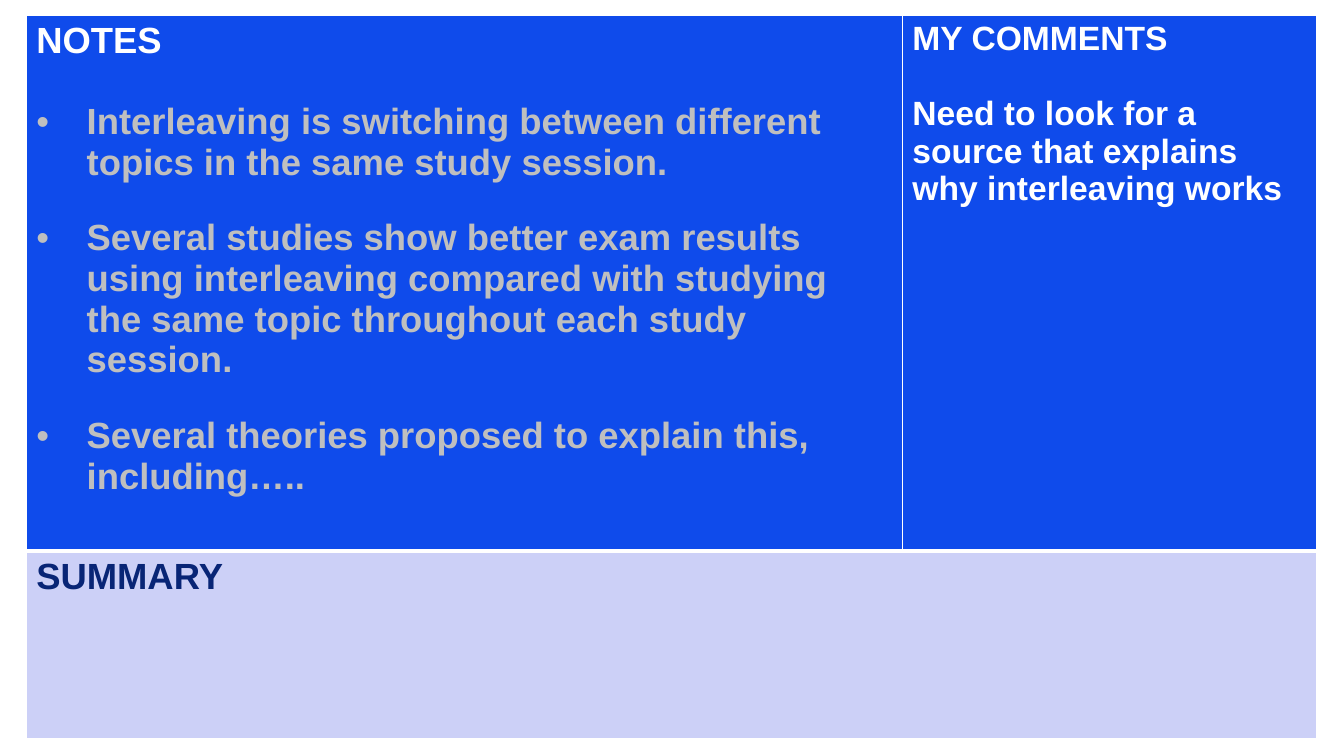
from dataclasses import dataclass

import lxml.etree
import pptx
import pptx.dml.color
import pptx.oxml.ns
import pptx.table
import pptx.text.text
import pptx.util

Inches = pptx.util.Inches
Pt = pptx.util.Pt
RGBColor = pptx.dml.color.RGBColor
qn = pptx.oxml.ns.qn

WHITE = RGBColor(0xFF, 0xFF, 0xFF)
GREY = RGBColor(0xBF, 0xBF, 0xBF)
BLUE = RGBColor(0x0F, 0x4B, 0xEB)
PALE = RGBColor(0xCC, 0xD0, 0xF7)
NAVY = RGBColor(0x08, 0x25, 0x76)


@dataclass
class Line:
    text: str
    size: int
    color: RGBColor
    before: int = 0
    bullet: bool = False


@dataclass
class Panel:
    row: int
    col: int
    fill: RGBColor
    lines: list[Line]


PANELS = [
    Panel(0, 0, BLUE, [
        Line("NOTES", 26, WHITE),
        Line("Interleaving is switching between different topics in the "
             "same study session.", 26, GREY, 29, True),
        Line("Several studies show better exam results using interleaving "
             "compared with studying the same topic throughout each study "
             "session.", 26, GREY, 25, True),
        Line("Several theories proposed to explain this, including…..",
             26, GREY, 25, True),
    ]),
    Panel(0, 1, BLUE, [
        Line("MY COMMENTS", 24, WHITE),
        Line("Need to look for a source that explains why interleaving "
             "works", 24, WHITE, 27),
    ]),
    Panel(1, 0, PALE, [Line("SUMMARY", 26, NAVY)]),
]


def add_bullet(para: pptx.text.text._Paragraph) -> None:
    props = para._p.get_or_add_pPr()
    props.set("marL", str(Inches(0.5)))
    props.set("indent", str(-Inches(0.5)))
    lxml.etree.SubElement(props, qn("a:buFont")).set("typeface", "Arial")
    lxml.etree.SubElement(props, qn("a:buChar")).set("char", "•")


def add_line(para: pptx.text.text._Paragraph, line: Line) -> None:
    if line.bullet:
        add_bullet(para)
    if line.before:
        para.space_before = Pt(line.before)
    run = para.add_run()
    run.text = line.text
    run.font.name = "Arial"
    run.font.size = Pt(line.size)
    run.font.bold = True
    run.font.color.rgb = line.color


def set_edges(cell: pptx.table._Cell, top: int, base: int) -> None:
    props = cell._tc.get_or_add_tcPr()
    edges = {"L": 1, "R": 1, "T": top, "B": base}
    for spot, (side, width) in enumerate(edges.items()):
        edge = lxml.etree.Element(qn(f"a:ln{side}"), w=str(Pt(width)))
        fill = lxml.etree.SubElement(edge, qn("a:solidFill"))
        lxml.etree.SubElement(fill, qn("a:srgbClr")).set("val", str(WHITE))
        props.insert(spot, edge)


def fill_panel(grid: pptx.table.Table, panel: Panel) -> None:
    cell = grid.cell(panel.row, panel.col)
    frame = cell.text_frame
    for spot, line in enumerate(panel.lines):
        para = frame.add_paragraph() if spot else frame.paragraphs[0]
        add_line(para, line)
    cell.fill.solid()
    cell.fill.fore_color.rgb = panel.fill


def main() -> None:
    deck = pptx.Presentation()
    deck.slide_width = Inches(13.33)
    deck.slide_height = Inches(7.5)
    slide = deck.slides.add_slide(deck.slide_layouts[6])

    # Notes table
    grid = slide.shapes.add_table(
        2, 2, Inches(0.26), Inches(0.15), Inches(12.8), Inches(7.18)).table
    grid.horz_banding = False
    for col, width in zip(grid.columns, (8.69, 4.11)):
        col.width = Inches(width)
    for row, height in zip(grid.rows, (5.32, 1.86)):
        row.height = Inches(height)
    grid.cell(1, 0).merge(grid.cell(1, 1))

    # Panels, then the white rules with a thick one between the rows
    for panel in PANELS:
        fill_panel(grid, panel)
    for row, (top, base) in enumerate([(1, 3), (3, 1)]):
        for col in range(2):
            set_edges(grid.cell(row, col), top, base)

    deck.save("out.pptx")


if __name__ == "__main__":
    main()
